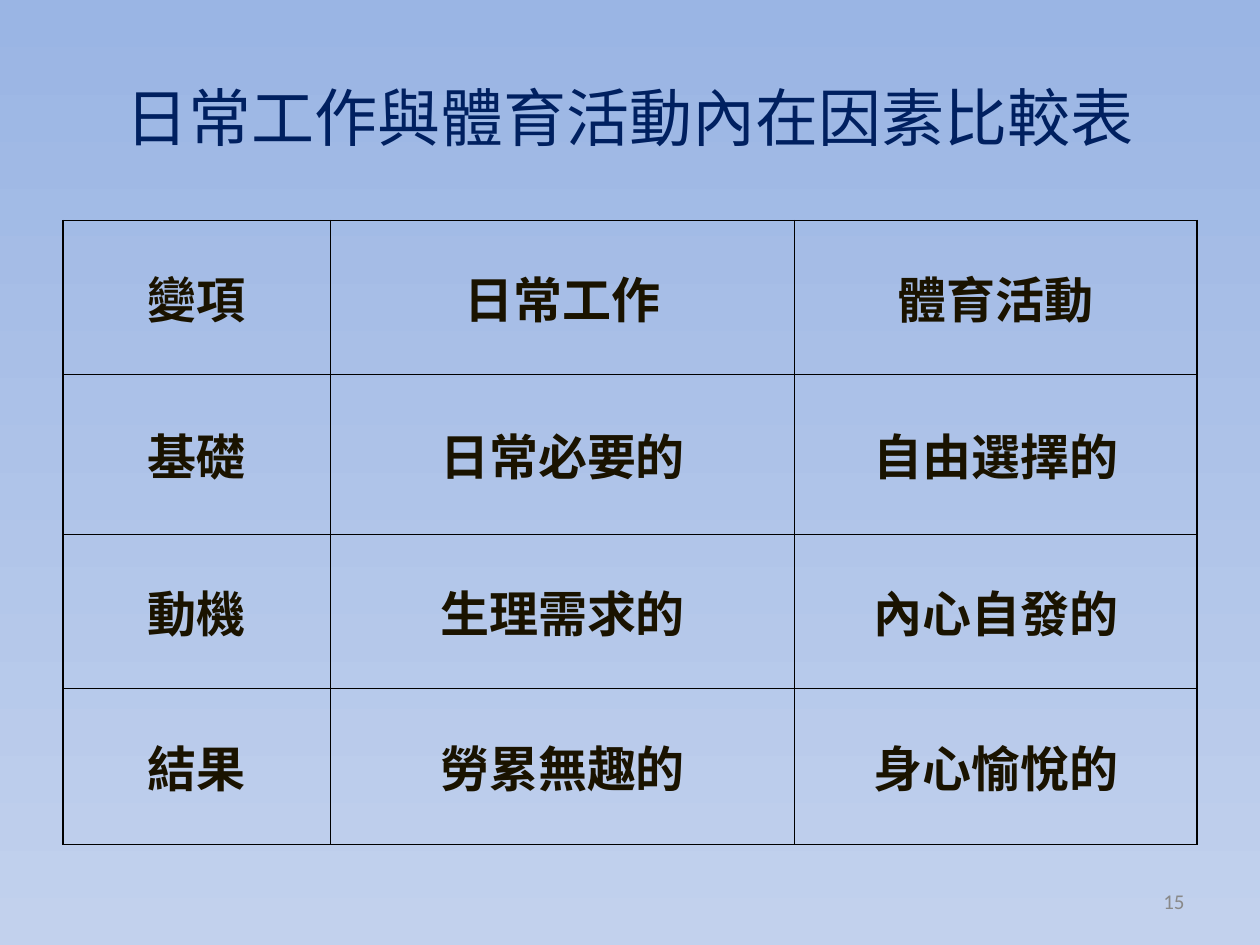
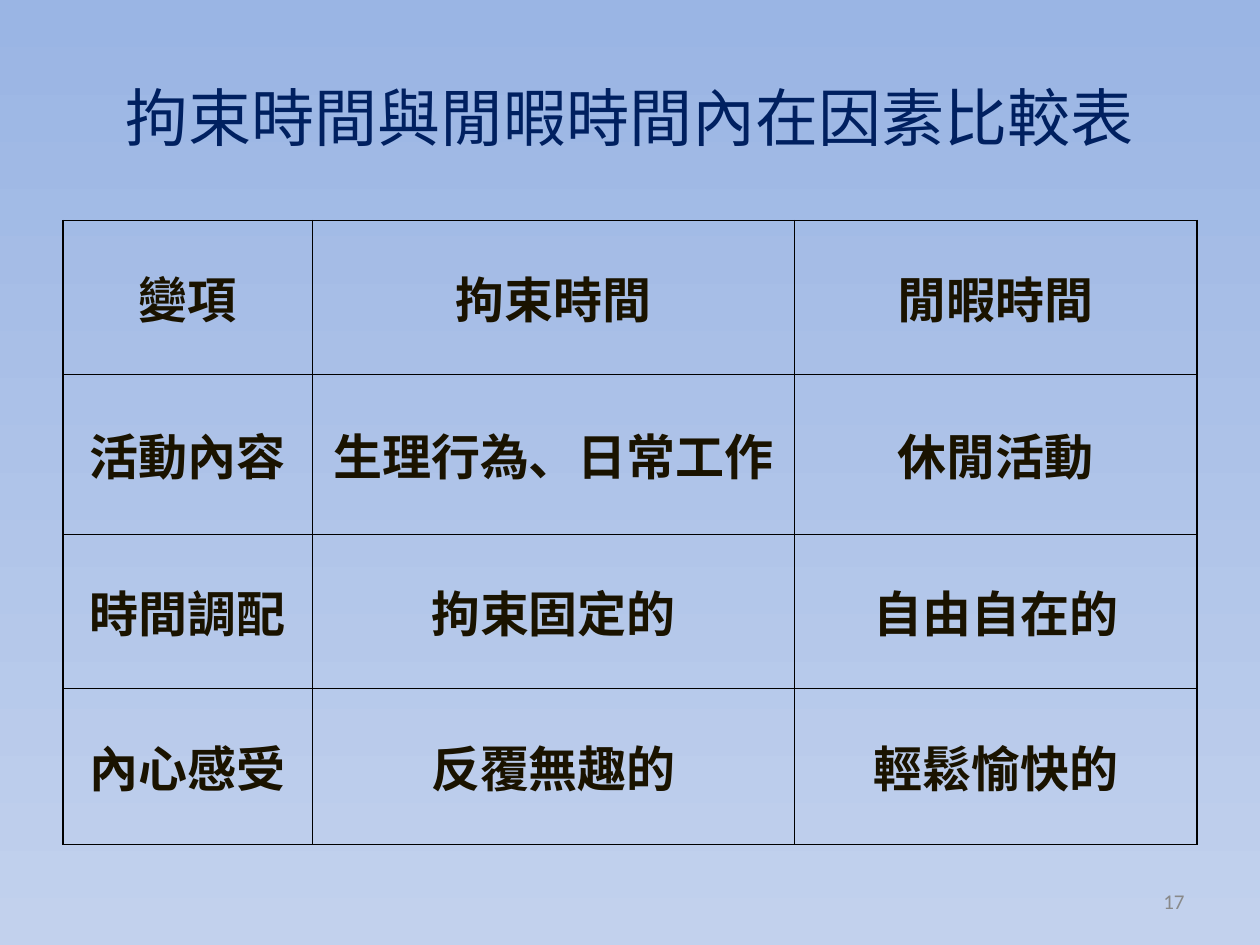
from lxml.etree import SubElement
from pptx import Presentation
from pptx.dml.color import RGBColor
from pptx.enum.text import MSO_ANCHOR as ANCHOR, PP_ALIGN as ALIGN
from pptx.oxml import parse_xml
from pptx.oxml.ns import nsdecls, qn
from pptx.util import Pt

SKY_TOP = RGBColor(0x9A, 0xB5, 0xE4)
SKY_BOTTOM = RGBColor(0xC2, 0xD1, 0xED)
NAVY = RGBColor(0x00, 0x20, 0x60)
INK = RGBColor(0x1A, 0x13, 0x00)
GREY = RGBColor(0x89, 0x89, 0x89)
BLACK = RGBColor(0x00, 0x00, 0x00)
CJK_FONT = "Noto Sans CJK SC"
NUMBER_FONT = "Calibri"

MARGIN, CONTENT_WIDTH = 36, 648
ROW_HEIGHTS = [88, 91.5, 88, 89]

COMPARISONS = [
    {
        "title": "日常工作與體育活動內在因素比較表",
        "number": "15",
        "widths": [153, 265, 230],
        "rows": [
            ["變項", "日常工作", "體育活動"],
            ["基礎", "日常必要的", "自由選擇的"],
            ["動機", "生理需求的", "內心自發的"],
            ["結果", "勞累無趣的", "身心愉悅的"],
        ],
    },
    {
        "title": "拘束時間與閒暇時間內在因素比較表",
        "number": "17",
        "widths": [142.5, 275.5, 230],
        "rows": [
            ["變項", "拘束時間", "閒暇時間"],
            ["活動內容", "生理行為、日常工作", "休閒活動"],
            ["時間調配", "拘束固定的", "自由自在的"],
            ["內心感受", "反覆無趣的", "輕鬆愉快的"],
        ],
    },
]


def write(frame, text, size, color, font=CJK_FONT, bold=False, align=ALIGN.CENTER):
    """Fill a text frame, of a box or a cell, with one formatted paragraph."""
    frame.word_wrap = True
    paragraph = frame.paragraphs[0]
    paragraph.alignment = align
    run = paragraph.add_run()
    run.text = text
    run.font.size = Pt(size)
    run.font.bold = bold
    run.font.color.rgb = color
    run.font.name = font
    SubElement(run.font._element, qn("a:ea"), typeface=font)


def add_borders(cell):
    """Draw a 1 pt line on all four sides; the lines must precede the fill."""
    properties = cell._tc.get_or_add_tcPr()
    for position, side in enumerate(["lnL", "lnR", "lnT", "lnB"]):
        properties.insert(position, parse_xml(
            f'<a:{side} {nsdecls("a")} w="{Pt(1)}"><a:solidFill>'
            f'<a:srgbClr val="{BLACK}"/></a:solidFill></a:{side}>'))


deck = Presentation()
deck.slide_width, deck.slide_height = Pt(720), Pt(540)

for comparison in COMPARISONS:
    slide = deck.slides.add_slide(deck.slide_layouts[6])
    sky = slide.background.fill
    sky.gradient()
    sky.gradient_angle = 270
    for stop, color in zip(sky.gradient_stops, [SKY_TOP, SKY_BOTTOM]):
        stop.color.rgb = color

    title = slide.shapes.add_textbox(Pt(MARGIN), Pt(21.6), Pt(CONTENT_WIDTH), Pt(90))
    title.text_frame.vertical_anchor = ANCHOR.MIDDLE
    write(title.text_frame, comparison["title"], 36, NAVY)

    rows, widths = comparison["rows"], comparison["widths"]
    table = slide.shapes.add_table(
        len(rows), len(widths), Pt(MARGIN), Pt(126),
        Pt(CONTENT_WIDTH), Pt(sum(ROW_HEIGHTS))).table
    table.first_row = table.horz_banding = False
    for column, width in zip(table.columns, widths):
        column.width = Pt(width)
    for row, height, words in zip(table.rows, ROW_HEIGHTS, rows):
        row.height = Pt(height)
        for cell, word in zip(row.cells, words):
            cell.fill.background()
            cell.vertical_anchor = ANCHOR.MIDDLE
            add_borders(cell)
            write(cell.text_frame, word, 28, INK, bold=True)

    page_number = slide.shapes.add_textbox(Pt(516), Pt(500.5), Pt(168), Pt(28.8))
    page_number.text_frame.vertical_anchor = ANCHOR.MIDDLE
    write(page_number.text_frame, comparison["number"], 12, GREY,
          font=NUMBER_FONT, align=ALIGN.RIGHT)

deck.save("out.pptx")
